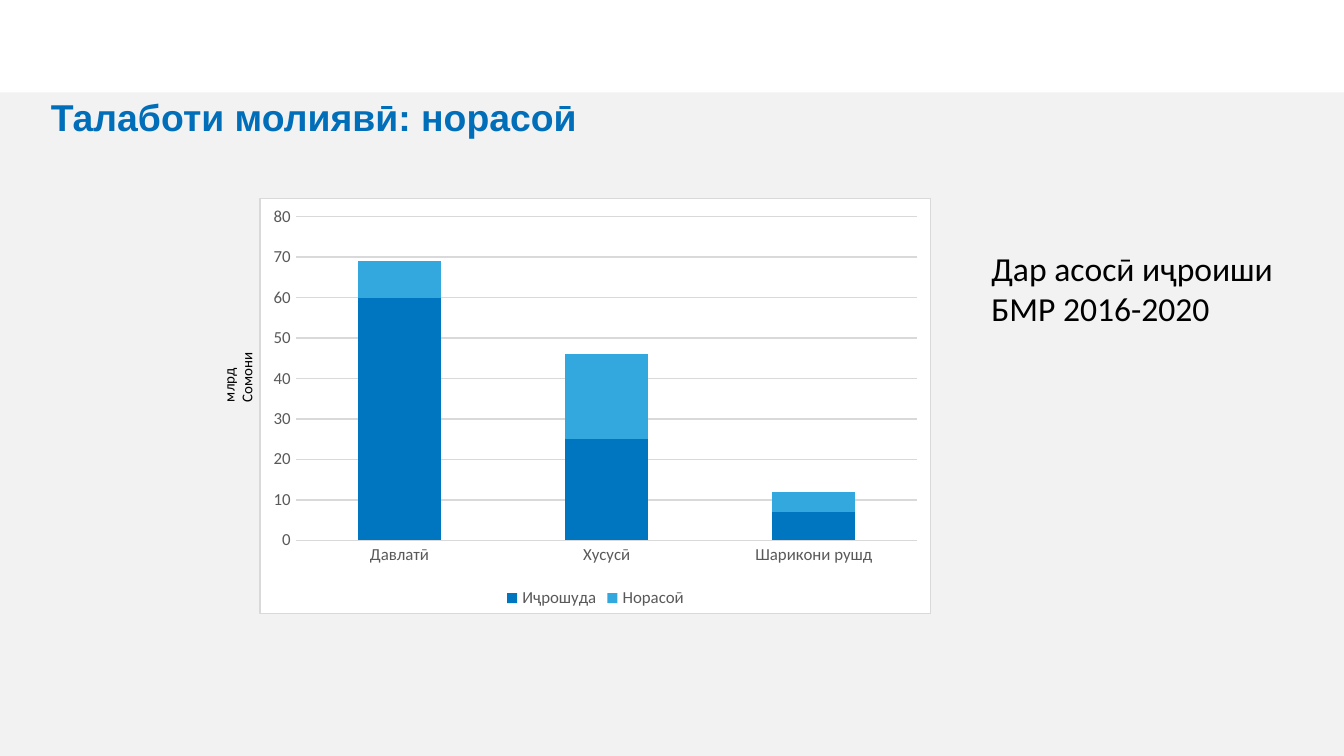
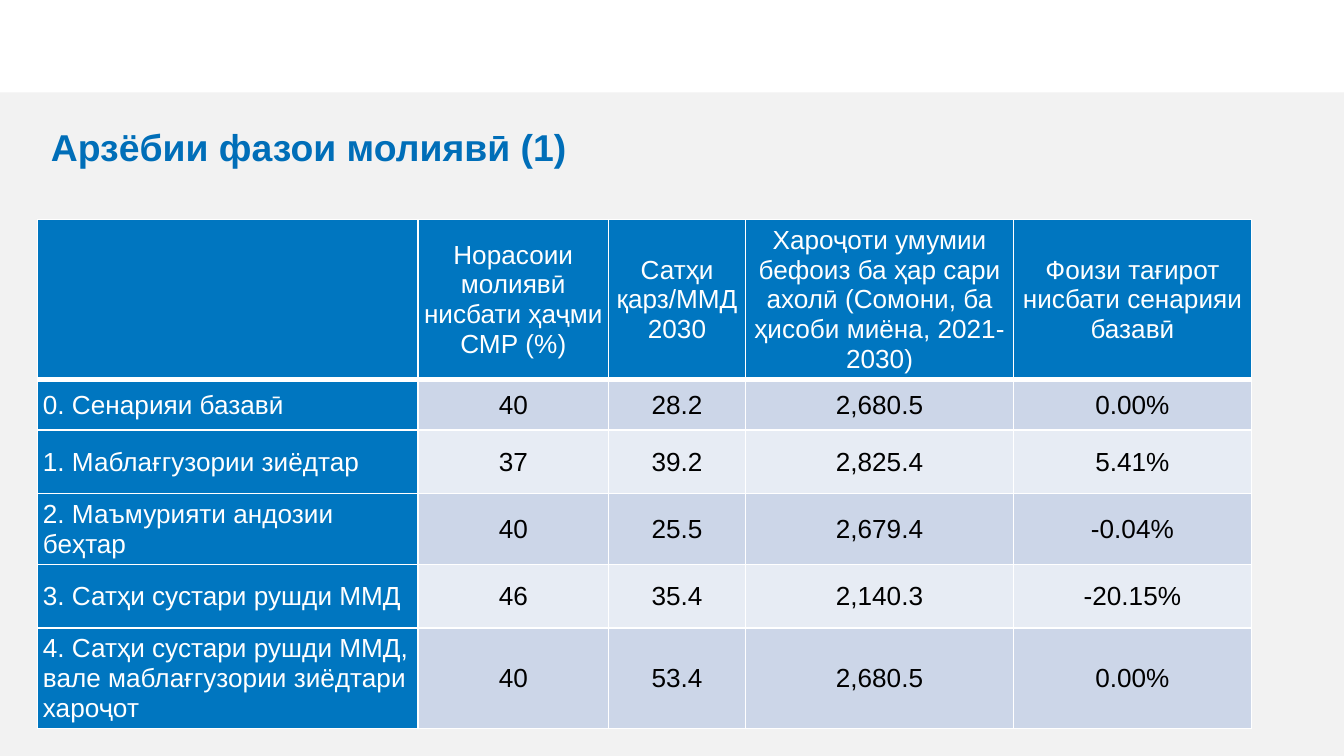
from lxml import etree
from pptx import Presentation
from pptx.chart.data import CategoryChartData
from pptx.dml.color import RGBColor
from pptx.enum.chart import XL_CHART_TYPE, XL_LEGEND_POSITION, XL_TICK_MARK
from pptx.enum.shapes import MSO_SHAPE
from pptx.enum.text import MSO_ANCHOR, PP_ALIGN
from pptx.oxml import parse_xml
from pptx.oxml.ns import nsdecls, qn
from pptx.util import Pt

STACKED = XL_CHART_TYPE.COLUMN_STACKED
LEGEND_BOTTOM = XL_LEGEND_POSITION.BOTTOM
NO_TICKS = XL_TICK_MARK.NONE
MIDDLE = MSO_ANCHOR.MIDDLE
LEFT, CENTER = PP_ALIGN.LEFT, PP_ALIGN.CENTER

TITLE_BLUE, BLUE, SKY = "006EB8", "0076C0", "33A8DF"
PANEL_GRAY, RULE_GRAY, LABEL_GRAY = "F2F2F2", "D9D9D9", "595959"
BAND_DARK, BAND_LIGHT = "CCD6E8", "E7ECF4"
WHITE, BLACK = "FFFFFF", "000000"


def color(hex_text):
    return RGBColor.from_string(hex_text)


def style(paragraph, font_name, size, hex_text, align=LEFT):
    paragraph.alignment = align
    paragraph.font.name = font_name
    paragraph.font.size = Pt(size)
    paragraph.font.color.rgb = color(hex_text)


prs = Presentation()
prs.slide_width, prs.slide_height = Pt(720), Pt(405)
title_only = prs.slide_layouts[5]

# Slides and titles
slides = []
for heading, top in [("Талаботи молиявӣ: норасоӣ", 44),
                     ("Арзёбии фазои молиявӣ (1)", 60.5)]:
    slide = prs.slides.add_slide(title_only)
    title = slide.shapes.title
    title.left, title.top, title.width, title.height = Pt(20), Pt(top), Pt(620), Pt(39.5)
    title.text_frame.text = heading
    title.text_frame.vertical_anchor = MIDDLE
    line = title.text_frame.paragraphs[0]
    style(line, "Arial", 20, TITLE_BLUE)
    line.font.bold = True
    line.line_spacing = 0.9
    slides.append(slide)
gap_slide, space_slide = slides

# Gray panel, shared through the slide master
panel = gap_slide.shapes.add_shape(MSO_SHAPE.RECTANGLE, 0, Pt(49.5), Pt(720), Pt(355.5))
panel.shadow.inherit = False
panel.fill.solid()
panel.fill.fore_color.rgb = color(PANEL_GRAY)
panel.line.fill.background()
panel.element.nvSpPr.cNvPr.set("id", "20")
prs.slide_master.shapes.element.insert(2, panel.element)

# Slide 1: note beside the chart
note = gap_slide.shapes.add_textbox(Pt(524), Pt(129), Pt(176), Pt(51)).text_frame
note.word_wrap = True
note.text = "Дар асосӣ иҷроиши БМР 2016-2020"
style(note.paragraphs[0], "Calibri", 18, BLACK)

# Slide 1: stacked columns
funding = CategoryChartData(number_format="0")
funding.categories = ["Давлатӣ", "Хусусӣ", "Шарикони рушд"]
funding.add_series("Иҷрошуда", [60, 25, 7])
funding.add_series("Норасоӣ", [9, 21, 5])
chart = gap_slide.shapes.add_chart(
    STACKED, Pt(139), Pt(106), Pt(360), Pt(223), funding).chart
chart.has_title = False
chart.font.name = "Calibri"
chart.font.size = Pt(10)
chart.font.color.rgb = color(BLACK)

columns = chart.plots[0]
columns.gap_width = 149
columns.overlap = 100
columns.vary_by_categories = False
for series, fill in zip(columns.series, [BLUE, SKY]):
    series.format.fill.solid()
    series.format.fill.fore_color.rgb = color(fill)

chart.has_legend = True
chart.legend.position = LEGEND_BOTTOM
chart.legend.include_in_layout = False

categories, amounts = chart.category_axis, chart.value_axis
for axis in (categories, amounts):
    axis.major_tick_mark = axis.minor_tick_mark = NO_TICKS
for font in (categories.tick_labels.font, amounts.tick_labels.font, chart.legend.font):
    font.name = "Calibri"
    font.size = Pt(9)
    font.color.rgb = color(LABEL_GRAY)
amounts.minimum_scale, amounts.maximum_scale, amounts.major_unit = 0, 80, 10
amounts.tick_labels.number_format = "0"
amounts.tick_labels.number_format_is_linked = False
amounts.format.line.fill.background()
for rule in (categories.format.line, amounts.major_gridlines.format.line):
    rule.color.rgb = color(RULE_GRAY)
    rule.width = Pt(0.75)

# Chart area: white with a thin border
chart_area = parse_xml(
    f'<c:spPr {nsdecls("c", "a")}>'
    f'<a:solidFill><a:srgbClr val="{WHITE}"/></a:solidFill>'
    f'<a:ln w="{Pt(0.75)}"><a:solidFill><a:srgbClr val="{RULE_GRAY}"/></a:solidFill></a:ln>'
    '</c:spPr>')
chart.element.find(qn("c:txPr")).addprevious(chart_area)

# Slide 1: rotated unit label
unit = gap_slide.shapes.add_textbox(Pt(115), Pt(160), Pt(24.5), Pt(62.5)).text_frame
unit.word_wrap = True
unit.vertical_anchor = MIDDLE
unit.text = "млрд\vСомони"
unit._txBody.bodyPr.set("vert", "vert270")
style(unit.paragraphs[0], "Calibri", 8, BLACK)

# Slide 2: scenario table
scenarios = [
    ["", "Норасоии молиявӣ нисбати ҳаҷми СМР (%)", "Сатҳи қарз/ММД 2030",
     "Хароҷоти умумии бефоиз ба ҳар сари ахолӣ (Сомони, ба ҳисоби миёна, 2021-2030)",
     "Фоизи тағирот нисбати сенарияи базавӣ"],
    ["0. Сенарияи базавӣ", "40", "28.2", "2,680.5", "0.00%"],
    ["1. Маблағгузории зиёдтар", "37", "39.2", "2,825.4", "5.41%"],
    ["2. Маъмурияти андозии беҳтар", "40", "25.5", "2,679.4", "-0.04%"],
    ["3. Сатҳи сустари рушди ММД", "46", "35.4", "2,140.3", "-20.15%"],
    ["4. Сатҳи сустари рушди ММД, вале маблағгузории зиёдтари хароҷот",
     "40", "53.4", "2,680.5", "0.00%"],
]
widths = [204, 102, 73.5, 143.5, 127.5]
heights = [73.5, 27, 34, 34, 34, 47]
table = space_slide.shapes.add_table(
    len(heights), len(widths), Pt(20), Pt(117.5), Pt(sum(widths)), Pt(sum(heights))).table
for column, width in zip(table.columns, widths):
    column.width = Pt(width)
for row, height in zip(table.rows, heights):
    row.height = Pt(height)

for r, scenario in enumerate(scenarios):
    for c, entry in enumerate(scenario):
        cell = table.cell(r, c)
        is_heading = r == 0 or c == 0
        cell.text = entry
        cell.vertical_anchor = MIDDLE
        cell.margin_left = cell.margin_right = cell.margin_top = cell.margin_bottom = Pt(3)
        line = cell.text_frame.paragraphs[0]
        style(line, "Arial", 14, WHITE if is_heading else BLACK, CENTER if c else LEFT)
        line.line_spacing = Pt(16)

        # White borders, heavier below the heading row
        for side in ("lnL", "lnR", "lnT", "lnB"):
            heavy = (r, side) in [(0, "lnB"), (1, "lnT")]
            border = etree.SubElement(cell._tc.get_or_add_tcPr(), qn("a:" + side),
                                      w=str(Pt(3 if heavy else 1)))
            paint = etree.SubElement(border, qn("a:solidFill"))
            etree.SubElement(paint, qn("a:srgbClr"), val=WHITE)

        cell.fill.solid()
        band = BAND_DARK if r % 2 else BAND_LIGHT
        cell.fill.fore_color.rgb = color(BLUE if is_heading else band)

prs.save("out.pptx")
